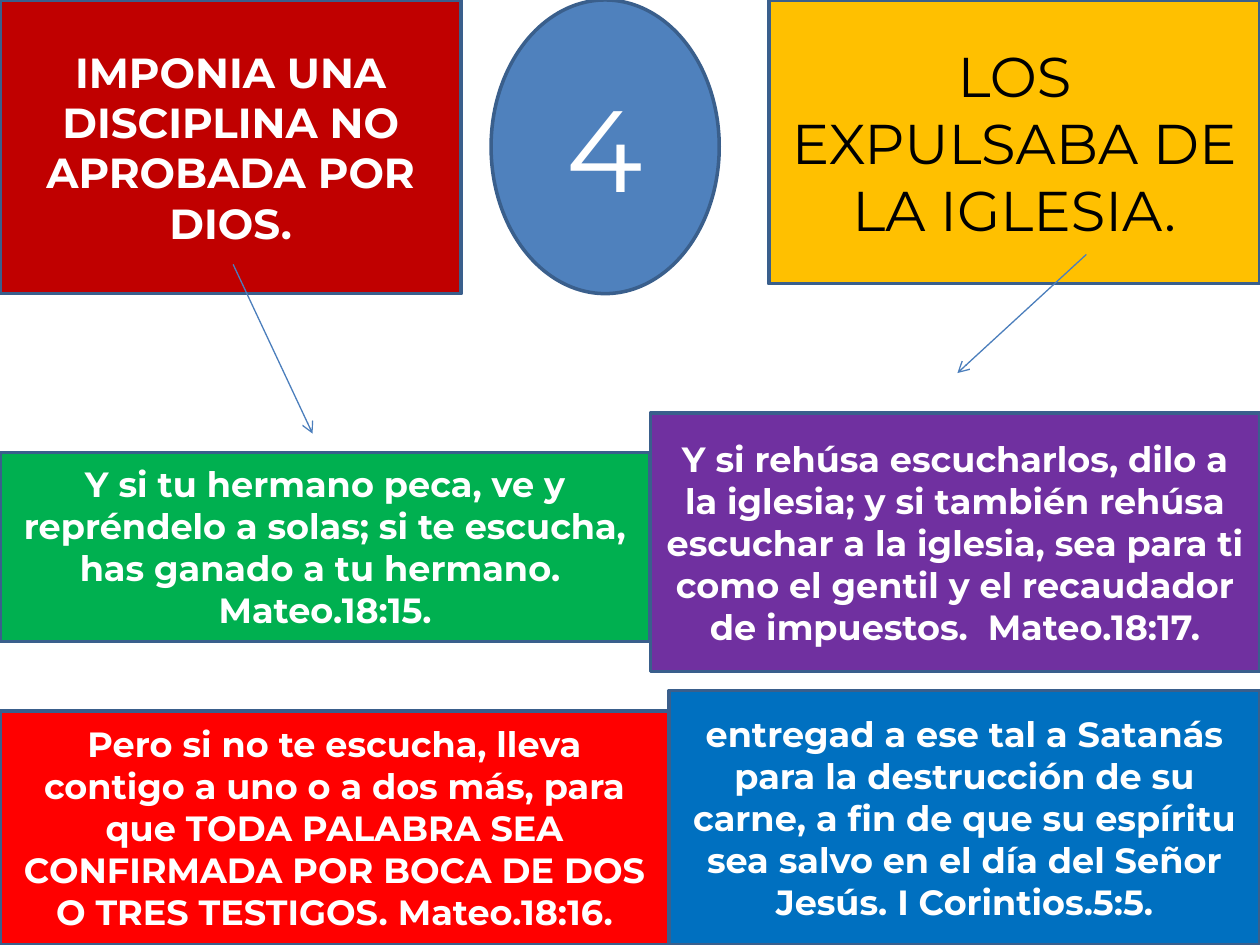
from lxml import etree
from pptx import Presentation
from pptx.dml.color import RGBColor
from pptx.enum.shapes import MSO_CONNECTOR, MSO_SHAPE
from pptx.enum.text import MSO_ANCHOR, PP_ALIGN
from pptx.oxml.ns import qn
from pptx.util import Cm, Pt

RECT, OVAL = MSO_SHAPE.RECTANGLE, MSO_SHAPE.OVAL
LINE = MSO_CONNECTOR.STRAIGHT
MIDDLE, CENTER = MSO_ANCHOR.MIDDLE, PP_ALIGN.CENTER

WHITE = RGBColor(0xFF, 0xFF, 0xFF)
BLACK = RGBColor(0x00, 0x00, 0x00)
MAROON = RGBColor(0xC0, 0x00, 0x00)
STEEL = RGBColor(0x4F, 0x81, 0xBD)
GOLD = RGBColor(0xFF, 0xC0, 0x00)
GREEN = RGBColor(0x00, 0xB0, 0x50)
RED = RGBColor(0xFF, 0x00, 0x00)
PURPLE = RGBColor(0x70, 0x30, 0xA0)
BLUE = RGBColor(0x00, 0x70, 0xC0)
EDGE = RGBColor(0x3A, 0x5F, 0x8C)
ARROW = RGBColor(0x4B, 0x7E, 0xBC)

WIDE, HIGH = 25.4, 19.05  # slide size in cm
TOP = 5.92                # height of the left heading and the number
SPLIT, LOW = 13.11, 13.49  # column edges of the two verse rows


def apply(item, values):
    for name, value in values.items():
        setattr(item, name, value)


class Board:
    """Holds the style and the current slide."""

    font = {"name": "Montserrat", "size": Pt(20), "bold": True}
    frame = {"word_wrap": True, "vertical_anchor": MIDDLE}

    def __init__(self, slide):
        self.slide = slide

    def stroke(self, line, color, width):
        line.color.rgb = color
        line.width = Pt(width)

    def box(self, text, area, fill, kind=RECT, ink=WHITE, **font):
        shape = self.slide.shapes.add_shape(kind, *map(Cm, area))
        shape.shadow.inherit = False
        shape.fill.solid()
        shape.fill.fore_color.rgb = fill
        self.stroke(shape.line, EDGE, 2)
        apply(shape.text_frame, self.frame)
        par = shape.text_frame.paragraphs[0]
        par.alignment = CENTER
        run = par.add_run()
        run.text = text
        apply(run.font, {**self.font, **font})
        run.font.color.rgb = ink

    def arrow(self, *ends):
        link = self.slide.shapes.add_connector(LINE, *map(Cm, ends))
        self.stroke(link.line, ARROW, 0.75)
        props = link._element.spPr
        etree.SubElement(props.find(qn("a:ln")), qn("a:tailEnd"), type="arrow")
        etree.SubElement(props, qn("a:effectLst"))


def main():
    deck = Presentation()
    apply(deck, {"slide_width": Cm(WIDE), "slide_height": Cm(HIGH)})
    board = Board(deck.slides.add_slide(deck.slide_layouts[6]))

    # Headings and number
    board.box("IMPONIA UNA DISCIPLINA NO APROBADA POR DIOS.",
              (0, 0, 9.3, TOP), MAROON, size=Pt(24))
    board.box("4", (9.9, 0, 4.6, TOP), STEEL, OVAL, size=Pt(66), bold=False)
    board.box("LOS EXPULSABA DE LA IGLESIA.", (15.5, 0, WIDE - 15.5, 5.72),
              GOLD, ink=BLACK, size=Pt(32), bold=False)

    # Left verses
    board.arrow(4.7, 5.33, 6.3, 8.74)
    board.box("Y si tu hermano peca, ve y repréndelo a solas; si te escucha, "
              "has ganado a tu hermano.  Mateo.18:15.",
              (0, 9.12, SPLIT, 3.81), GREEN)
    board.box("Pero si no te escucha, lleva contigo a uno o a dos más, para "
              "que TODA PALABRA SEA CONFIRMADA POR BOCA DE DOS O TRES "
              "TESTIGOS. Mateo.18:16.",
              (0, 14.33, LOW, HIGH - 14.33), RED)

    # Right verses
    board.arrow(21.9, 5.13, 19.3, 7.52)
    board.box("Y si rehúsa escucharlos, dilo a la iglesia; y si también "
              "rehúsa escuchar a la iglesia, sea para ti como el gentil y el "
              "recaudador de impuestos.  Mateo.18:17.",
              (SPLIT, 8.33, WIDE - SPLIT, 5.21), PURPLE)
    board.box("entregad a ese tal a Satanás para la destrucción de su carne, "
              "a fin de que su espíritu sea salvo en el día del Señor Jesús. "
              "I Corintios.5:5.",
              (LOW, 13.92, WIDE - LOW, HIGH - 13.92), BLUE)

    deck.save("out.pptx")


if __name__ == "__main__":
    main()
